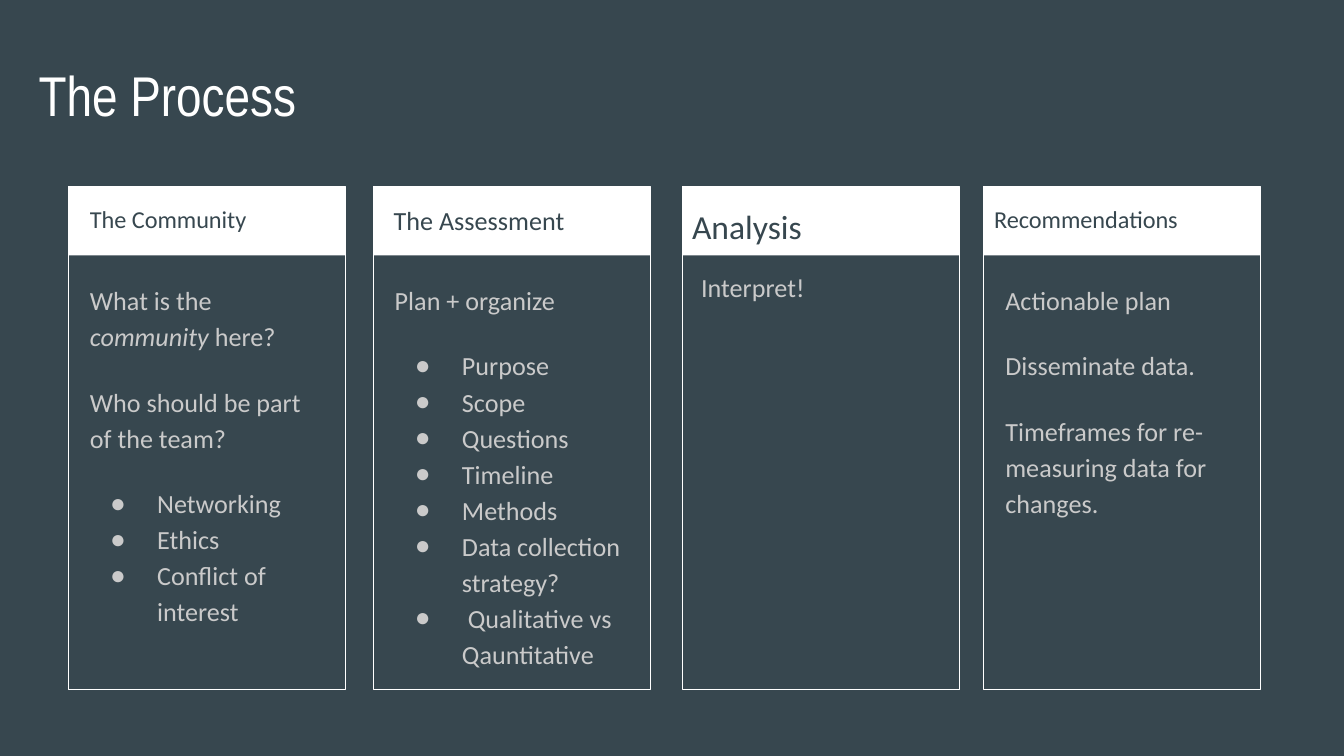
from lxml.etree import SubElement
from pptx import Presentation
from pptx.dml.color import RGBColor
from pptx.enum.shapes import MSO_SHAPE
from pptx.enum.text import MSO_ANCHOR, MSO_AUTO_SIZE, PP_ALIGN
from pptx.oxml.ns import qn
from pptx.util import Cm, Pt

# Content: asterisks enclose italic words
TITLE = "The Process"
STAGES = [
    {"heading": "The Community", "size": 13,
     "statements": ["What is the *community* here?", "Who should be part of the team?"],
     "bullets": ["Networking", "Ethics", "Conflict of interest"],
     "left": 1.3, "heading_left": 1.45, "list_left": 1.45, "list_top": 5.03},
    {"heading": "The Assessment", "size": 14,
     "statements": ["Plan + organize"],
     "bullets": ["Purpose", "Scope", "Questions", "Timeline", "Methods",
                 "Data collection strategy?", " Qualitative vs Qauntitative"],
     "left": 7.06, "heading_left": 7.19, "list_left": 7.21, "list_top": 5.03},
    {"heading": "Analysis", "size": 18,
     "statements": ["Interpret!"], "bullets": [],
     "left": 12.9, "heading_left": 12.83, "list_left": 13, "list_top": 4.8},
    {"heading": "Recommendations", "size": 13,
     "statements": ["Actionable plan", "Disseminate data.",
                    "Timeframes for re-measuring data for changes."], "bullets": [],
     "left": 18.59, "heading_left": 18.54, "list_left": 18.75, "list_top": 5.03},
]
SLATE, WHITE, GREY = "37474F", "FFFFFF", "CACACA"
CARD_TOP, CARD_WIDTH, CARD_HEIGHT, BAND_HEIGHT = 3.53, 5.23, 9.5, 1.3


def paint(target, color):
    """Give a fill or line fill a solid colour."""
    target.solid()
    target.fore_color.rgb = RGBColor.from_string(color)


def place(shape, left, top, width, height):
    shape.left, shape.top, shape.width, shape.height = map(Cm, (left, top, width, height))


def prepare(frame):
    frame.word_wrap = True
    frame.auto_size = MSO_AUTO_SIZE.NONE
    frame.vertical_anchor = MSO_ANCHOR.TOP
    frame.margin_left = frame.margin_right = Cm(0.25)
    frame.margin_top = frame.margin_bottom = Cm(0.25)


def style(paragraph, size, color, font="Calibri", spacing=1.15, before=0):
    paragraph.alignment = PP_ALIGN.LEFT
    paragraph.line_spacing = spacing
    paragraph.space_before, paragraph.space_after = Pt(before), Pt(0)
    for run in paragraph.runs:
        run.font.name, run.font.size, run.font.bold = font, Pt(size), False
        paint(run.font.fill, color)


def set_bullet(paragraph, shown):
    properties = paragraph._p.get_or_add_pPr()
    properties.set("marL", str(Cm(1.27) if shown else 0))
    properties.set("indent", str(Cm(-0.89) if shown else 0))
    if shown:
        color = SubElement(properties, qn("a:buClr"))
        SubElement(color, qn("a:srgbClr"), val=GREY)
        SubElement(properties, qn("a:buChar"), char="●")
    else:
        SubElement(properties, qn("a:buNone"))


def add_rectangle(slide, left, height):
    box = slide.shapes.add_shape(MSO_SHAPE.RECTANGLE, Cm(left), Cm(CARD_TOP),
                                 Cm(CARD_WIDTH), Cm(height))
    box.shadow.inherit = False
    return box


def fill_list(frame, stage):
    prepare(frame)
    entries = [(text, False) for text in stage["statements"]]
    entries += [(text, True) for text in stage["bullets"]]
    for index, (text, bulleted) in enumerate(entries):
        paragraph = frame.add_paragraph() if index else frame.paragraphs[0]
        for part, words in enumerate(text.split("*")):
            run = paragraph.add_run()
            run.text = words
            run.font.italic = part % 2 == 1
        # Consecutive bullets stay tight; every other entry opens a gap
        tight = index == 0 or (bulleted and entries[index - 1][1])
        style(paragraph, 14, GREY, before=0 if tight else 16)
        set_bullet(paragraph, bulleted)


# Slide and background
presentation = Presentation()
presentation.slide_width, presentation.slide_height = Cm(25.4), Cm(14.29)
comparison = presentation.slide_layouts.get_by_name("Comparison")
slide = presentation.slides.add_slide(comparison)
paint(slide.background.fill, SLATE)

# Title
title = slide.shapes.title
place(title, 0.48, 0.89, 23.67, 1.6)
prepare(title.text_frame)
title.text_frame.text = TITLE
style(title.text_frame.paragraphs[0], 30, WHITE, "Arial Narrow", spacing=1)

# Stage cards
lists = [shape for shape in slide.placeholders if 1 <= shape.placeholder_format.idx <= 4]
for stage, list_body in zip(STAGES, lists):
    band = add_rectangle(slide, stage["left"], BAND_HEIGHT)
    paint(band.fill, WHITE)
    band.line.fill.background()

    border = add_rectangle(slide, stage["left"], CARD_HEIGHT)
    border.fill.background()
    paint(border.line.fill, WHITE)
    border.line.width = Pt(0.75)

    heading = slide.shapes.add_textbox(Cm(stage["heading_left"]), Cm(CARD_TOP),
                                       Cm(4.98), Cm(1.27))
    prepare(heading.text_frame)
    heading.text_frame.text = stage["heading"]
    style(heading.text_frame.paragraphs[0], stage["size"], SLATE)

    place(list_body, stage["list_left"], stage["list_top"], 4.95, 7.77)
    fill_list(list_body.text_frame, stage)

presentation.save("out.pptx")
